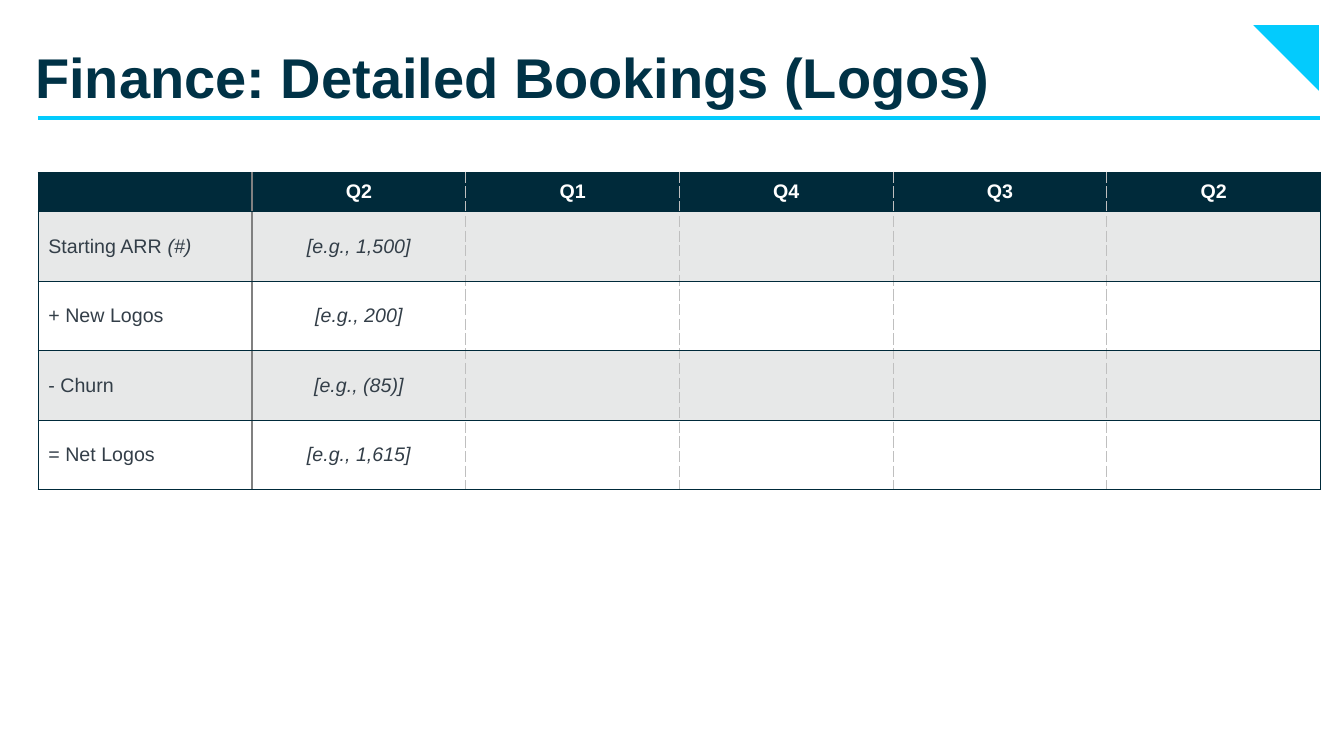
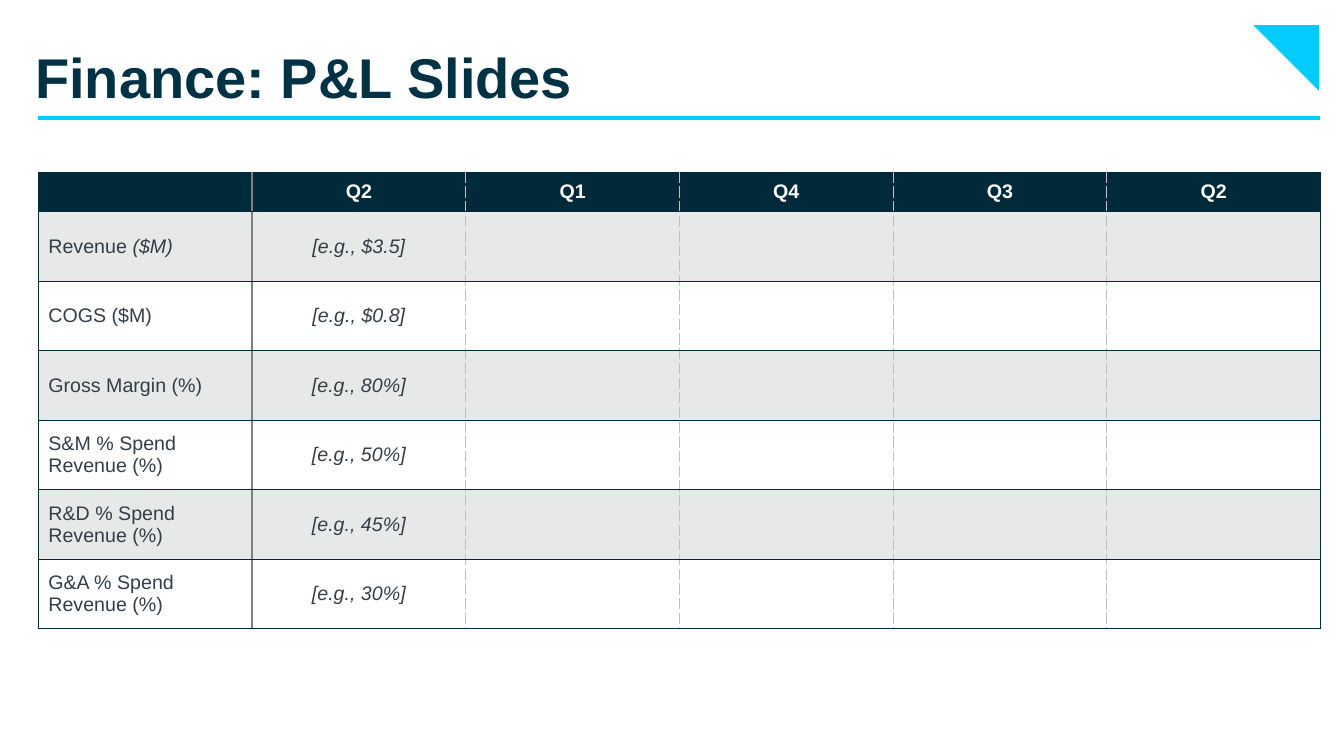
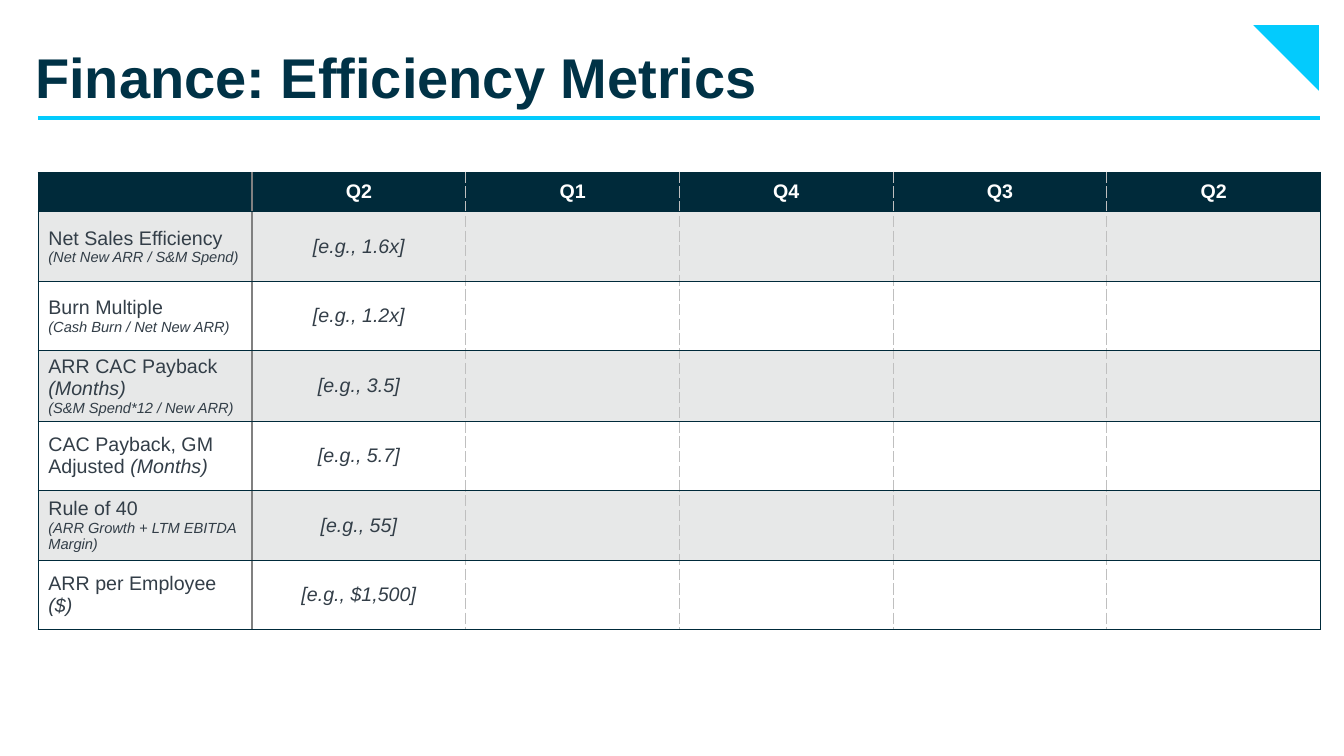
from dataclasses import dataclass

from lxml.etree import SubElement
from pptx import Presentation
from pptx.dml.color import RGBColor
from pptx.enum.shapes import MSO_CONNECTOR as Connector, MSO_SHAPE as Shape
from pptx.enum.text import MSO_ANCHOR as Anchor, MSO_AUTO_SIZE as AutoSize, PP_ALIGN as Align
from pptx.oxml.ns import qn
from pptx.util import Emu, Pt

COLORS = {
    "title": "003246",
    "accent": "03CBFD",
    "header": "002A3A",
    "text": "333E48",
    "band": "E7E8E8",
    "white": "FFFFFF",
    "label_edge": "808080",
    "quarter_edge": "BFBFBF",
}
QUARTERS = ["Q2", "Q1", "Q4", "Q3", "Q2"]


@dataclass
class Metric:
    label: str
    example: str
    unit: str = ""
    formula: str = ""


def px(length):
    return Emu(length * 9144)


def color(name):
    return RGBColor.from_string(COLORS[name])


class Deck:
    font = "Arial"
    text_size = 14
    formula_size = 10.5
    left, right = 38, 1309
    table_top = 171
    column_width, header_height, row_height = 212, 39, 69

    def __init__(self):
        self.presentation = Presentation()
        self.presentation.slide_width = px(1333)
        self.presentation.slide_height = px(750)
        self.slide = None

    def add_slide(self, title):
        layout = self.presentation.slide_layouts[5]
        self.slide = self.presentation.slides.add_slide(layout)
        self.corner()
        self.title(title)
        self.rule()

    def corner(self):
        corner = self.slide.shapes.add_shape(
            Shape.RIGHT_TRIANGLE, px(1243), px(25), px(65), px(65))
        corner.rotation = 180
        corner.shadow.inherit = False
        corner.fill.solid()
        corner.fill.fore_color.rgb = color("accent")
        corner.line.fill.background()

    def title(self, text):
        title = self.slide.shapes.title
        title.left, title.top, title.width, title.height = map(px, (25, 25, 1284, 118))
        frame = title.text_frame
        frame.auto_size = AutoSize.NONE
        frame.vertical_anchor = Anchor.TOP
        frame.margin_left = frame.margin_right = frame.margin_bottom = px(10)
        frame.margin_top = px(17)
        frame.text = text
        frame.paragraphs[0].alignment = Align.LEFT
        self.style(frame.paragraphs[0].runs[0], 40, "title", bold=True)

    def rule(self):
        rule = self.slide.shapes.add_connector(
            Connector.STRAIGHT, px(self.left), px(117), px(self.right), px(117))
        rule.line.color.rgb = color("accent")
        rule.line.width = Pt(3)
        SubElement(rule.element.spPr, qn("a:effectLst"))

    def style(self, run, size, color_name, bold=False, italic=False):
        run.font.name = self.font
        run.font.size = Pt(size)
        run.font.color.rgb = color(color_name)
        run.font.bold = bold
        run.font.italic = italic

    def add_text(self, paragraph, text, size, color_name, **emphasis):
        run = paragraph.add_run()
        run.text = text
        self.style(run, size, color_name, **emphasis)

    def border(self, cell, side, color_name, dash="solid"):
        line = SubElement(cell._tc.get_or_add_tcPr(), qn(f"a:ln{side}"), w=str(Pt(1)))
        fill = SubElement(line, qn("a:solidFill"))
        SubElement(fill, qn("a:srgbClr"), val=COLORS[color_name])
        SubElement(line, qn("a:prstDash"), val=dash)

    def format_cell(self, cell, column, fill):
        edges = [("header",), ("label_edge",)]
        edges += [("quarter_edge", "lgDash")] * (len(QUARTERS) - 1) + [("header",)]
        self.border(cell, "L", *edges[column])
        self.border(cell, "R", *edges[column + 1])
        self.border(cell, "T", "header")
        self.border(cell, "B", "header")
        cell.fill.solid()
        cell.fill.fore_color.rgb = color(fill)
        cell.vertical_anchor = Anchor.MIDDLE
        paragraph = cell.text_frame.paragraphs[0]
        paragraph.alignment = Align.CENTER if column else Align.LEFT
        SubElement(paragraph._p, qn("a:endParaRPr"), sz=str(self.text_size * 100))

    def metric_label(self, cell, metric):
        frame = cell.text_frame
        name = frame.paragraphs[0]
        if metric.unit:
            self.add_text(name, metric.label + " ", self.text_size, "text")
            self.add_text(name, metric.unit, self.text_size, "text", italic=True)
        else:
            self.add_text(name, metric.label, self.text_size, "text")
        if metric.formula:
            self.add_text(frame.add_paragraph(), metric.formula,
                          self.formula_size, "text", italic=True)

    def metrics_table(self, metrics):
        columns = len(QUARTERS) + 1
        height = self.header_height + self.row_height * len(metrics)
        table = self.slide.shapes.add_table(
            len(metrics) + 1, columns, px(self.left), px(self.table_top),
            px(self.column_width * columns), px(height)).table
        table.horz_banding = False
        for column in table.columns:
            column.width = px(self.column_width)
        for index, row in enumerate(table.rows):
            row.height = px(self.row_height if index else self.header_height)
            fill = "header" if index == 0 else "band" if index % 2 else "white"
            for column, cell in enumerate(row.cells):
                self.format_cell(cell, column, fill)
        for column, quarter in enumerate(QUARTERS, 1):
            heading = table.cell(0, column).text_frame.paragraphs[0]
            self.add_text(heading, quarter, self.text_size, "white", bold=True)
        for index, metric in enumerate(metrics, 1):
            self.metric_label(table.cell(index, 0), metric)
            example = table.cell(index, 1).text_frame.paragraphs[0]
            self.add_text(example, f"[e.g., {metric.example}]",
                          self.text_size, "text", italic=True)

    def save(self):
        self.presentation.save("out.pptx")


SLIDES = {
    "Finance: Detailed Bookings (Logos)": [
        Metric("Starting ARR", "1,500", unit="(#)"),
        Metric("+ New Logos", "200"),
        Metric("- Churn", "(85)"),
        Metric("= Net Logos", "1,615"),
    ],
    "Finance: P&L Slides": [
        Metric("Revenue", "$3.5", unit="($M)"),
        Metric("COGS ($M)", "$0.8"),
        Metric("Gross Margin (%)", "80%"),
        Metric("S&M % Spend Revenue (%)", "50%"),
        Metric("R&D % Spend Revenue (%)", "45%"),
        Metric("G&A % Spend Revenue (%)", "30%"),
    ],
    "Finance: Efficiency Metrics": [
        Metric("Net Sales Efficiency", "1.6x", formula="(Net New ARR / S&M Spend)"),
        Metric("Burn Multiple", "1.2x", formula="(Cash Burn / Net New ARR)"),
        Metric("ARR CAC Payback", "3.5", unit="(Months)", formula="(S&M Spend*12 / New ARR)"),
        Metric("CAC Payback, GM Adjusted", "5.7", unit="(Months)"),
        Metric("Rule of 40", "55", formula="(ARR Growth + LTM EBITDA Margin)"),
        Metric("ARR per Employee", "$1,500", unit="($)"),
    ],
}


def main():
    deck = Deck()
    for title, metrics in SLIDES.items():
        deck.add_slide(title)
        deck.metrics_table(metrics)
    deck.save()


if __name__ == "__main__":
    main()
